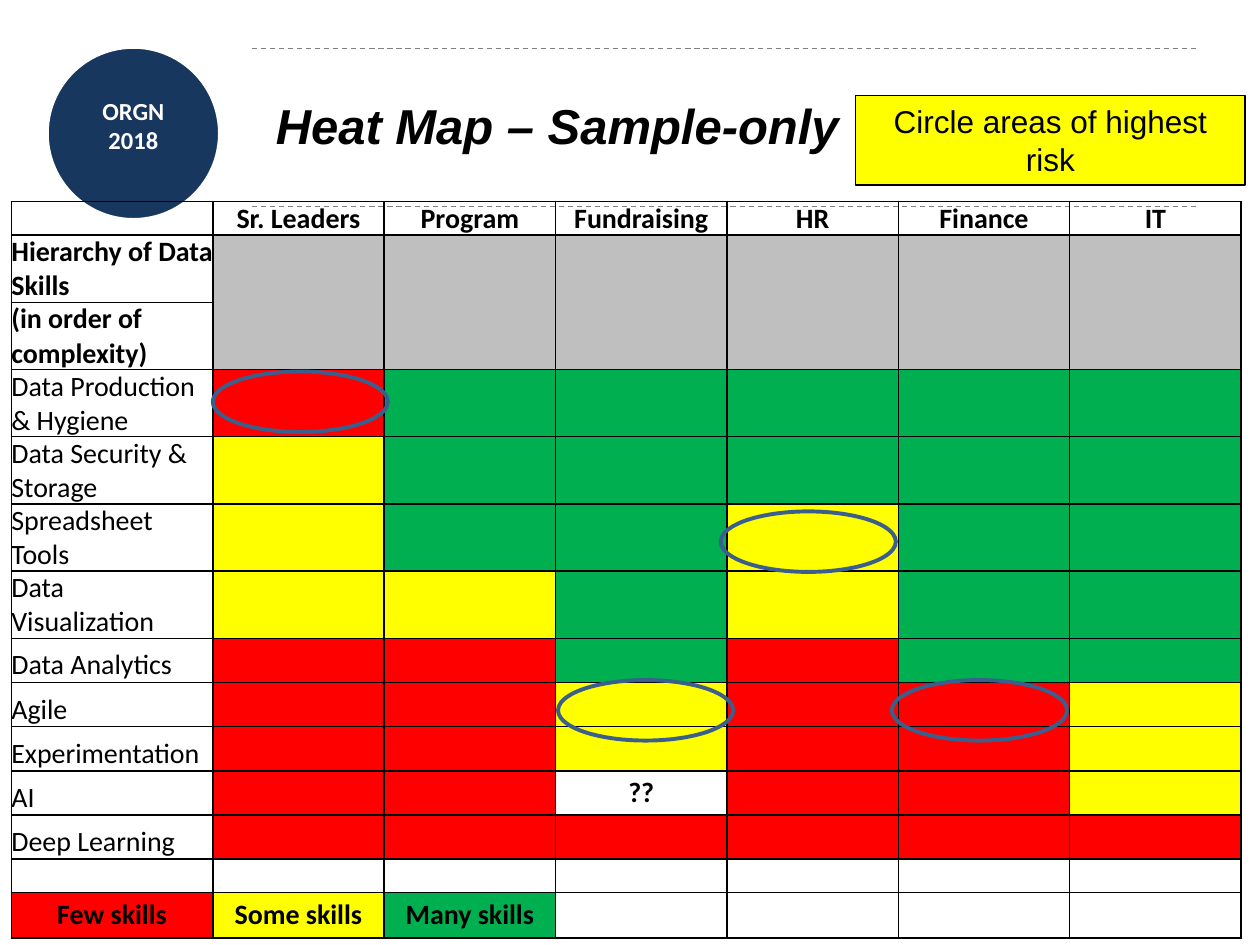
from dataclasses import dataclass
from typing import Any, Optional

import pptx
import pptx.dml.color
import pptx.enum.dml
import pptx.enum.shapes
import pptx.enum.text
import pptx.oxml
import pptx.oxml.ns
import pptx.util
from pptx.util import Cm, Pt

RGB = pptx.dml.color.RGBColor
ALIGN = pptx.enum.text.PP_ALIGN
ANCHOR = pptx.enum.text.MSO_ANCHOR
SHAPE = pptx.enum.shapes.MSO_SHAPE


@dataclass(frozen=True)
class Theme:
    navy: str = "17375E"
    ring: str = "3A5F8C"
    rule: str = "808080"
    grey: str = "BFBFBF"
    few: str = "FF0000"
    some: str = "FFFF00"
    many: str = "00B050"
    black: str = "000000"
    white: str = "FFFFFF"
    heading_font: str = "Arial"
    body_font: str = "Calibri"
    title_size: int = 28
    note_size: int = 18
    table_size: int = 16
    badge_size: int = 14


@dataclass(frozen=True)
class Box:
    """Left, top, width and height in centimetres."""
    left: float
    top: float
    width: float
    height: float

    def lengths(self) -> list[pptx.util.Length]:
        return [Cm(value) for value in (self.left, self.top, self.width, self.height)]


@dataclass(frozen=True)
class Skill:
    """A skill and its level per department: F few, S some, M many, ? unknown."""
    name: str
    levels: str


THEME = Theme()
LEVEL_COLORS = {"F": THEME.few, "S": THEME.some, "M": THEME.many, "?": THEME.white}
DEPARTMENTS = ["Sr. Leaders", "Program", "Fundraising", "HR", "Finance", "IT"]
HIERARCHY_LABELS = ["Hierarchy of Data Skills", "(in order of complexity)"]
SKILLS = [
    Skill("Data Production & Hygiene", "FMMMMM"),
    Skill("Data Security & Storage", "SMMMMM"),
    Skill("Spreadsheet Tools", "SMMSMM"),
    Skill("Data Visualization", "SSMSMM"),
    Skill("Data Analytics", "FFMFMM"),
    Skill("Agile", "FFSFFS"),
    Skill("Experimentation", "FFSFFS"),
    Skill("AI", "FF?FFS"),
    Skill("Deep Learning", "FFFFFF"),
]
LEGEND = [("Few skills", "F"), ("Some skills", "S"), ("Many skills", "M")]
TABLE_BOX = Box(0.23, 4.06, 24.79, 11.96)
LABEL_WIDTH, DEPARTMENT_WIDTH = 4.06, 3.455
ROW_HEIGHTS = [0.64] + [0.89] * (len(HIERARCHY_LABELS) + len(SKILLS)) + [0.64, 0.91]
RISK_RINGS = [(11.25, 13.71), (4.29, 7.49), (14.53, 10.31), (17.98, 13.71)]
RING_WIDTH, RING_HEIGHT = 3.53, 1.22


def apply_format(target: Any, values: dict[str, Any]) -> None:
    for name, value in values.items():
        setattr(target, name, value)


def write_lines(frame: Any, lines: list[str], align: Any, color: str, **font: Any) -> None:
    frame.text = "\n".join(lines)
    for paragraph in frame.paragraphs:
        paragraph.alignment = align
        for run in paragraph.runs:
            apply_format(run.font, font)
            run.font.color.rgb = RGB.from_string(color)


def add_outlined(slide: Any, kind: Any, box: Box, line: str, width: float,
                 fill: Optional[str] = None) -> Any:
    shape = slide.shapes.add_shape(kind, *box.lengths())
    shape.shadow.inherit = False
    shape.line.color.rgb = RGB.from_string(line)
    shape.line.width = Pt(width)
    if fill:
        shape.fill.solid()
        shape.fill.fore_color.rgb = RGB.from_string(fill)
    else:
        shape.fill.background()
    return shape


def add_rule(slide: Any, top: float) -> None:
    rule = slide.shapes.add_connector(
        pptx.enum.shapes.MSO_CONNECTOR.STRAIGHT, Cm(5.08), Cm(top), Cm(24.13), Cm(top))
    rule.line.color.rgb = RGB.from_string(THEME.rule)
    apply_format(rule.line, {"width": Pt(0.75),
                             "dash_style": pptx.enum.dml.MSO_LINE.DASH})
    rule._element.spPr.append(pptx.oxml.parse_xml(
        f'<a:effectLst {pptx.oxml.ns.nsdecls("a")}/>'))


def add_badge(slide: Any) -> None:
    add_outlined(slide, SHAPE.OVAL, Box(0.94, 0.94, 3.5, 3.5), THEME.white, 2.5, THEME.navy)
    label = slide.shapes.add_textbox(*Box(1.09, 1.93, 3.2, 1.19).lengths())
    apply_format(label.text_frame, {"word_wrap": True, "margin_left": 0, "margin_right": 0,
                                    "margin_top": 0, "margin_bottom": 0})
    write_lines(label.text_frame, ["ORGN", "2018"], ALIGN.CENTER, THEME.white,
                name=THEME.body_font, size=Pt(THEME.badge_size), bold=True)


def add_title(slide: Any) -> None:
    title = slide.shapes.add_textbox(*Box(5.31, 1.42, 19.28, 2.18).lengths())
    apply_format(title.text_frame, {"word_wrap": True, "vertical_anchor": ANCHOR.MIDDLE})
    write_lines(title.text_frame, ["Heat Map – Sample-only"], ALIGN.LEFT, THEME.black,
                name=THEME.heading_font, size=Pt(THEME.title_size), bold=True, italic=True)


def add_note(slide: Any) -> None:
    note = add_outlined(slide, SHAPE.RECTANGLE, Box(17.25, 1.93, 7.85, 1.8),
                        THEME.black, 0.75, THEME.some)
    apply_format(note.text_frame, {"word_wrap": True, "vertical_anchor": ANCHOR.TOP})
    write_lines(note.text_frame, ["Circle areas of highest risk"], ALIGN.CENTER,
                THEME.black, name=THEME.heading_font, size=Pt(THEME.note_size))


def prepare_cell(cell: Any) -> None:
    """Clear the default fill and margins, size the empty line and draw black borders."""
    apply_format(cell, {"margin_left": 0, "margin_right": 0,
                        "margin_top": 0, "margin_bottom": 0})
    cell.fill.background()
    end_format = cell.text_frame.paragraphs[0]._p.get_or_add_endParaRPr()
    end_format.set("sz", str(THEME.table_size * 100))
    properties = cell._tc.get_or_add_tcPr()
    for index, side in enumerate(("lnL", "lnR", "lnT", "lnB")):
        properties.insert(index, pptx.oxml.parse_xml(
            f'<a:{side} {pptx.oxml.ns.nsdecls("a")} w="{Pt(1)}"><a:solidFill>'
            f'<a:srgbClr val="{THEME.black}"/></a:solidFill></a:{side}>'))


def paint_cell(cell: Any, color: str) -> None:
    cell.fill.solid()
    cell.fill.fore_color.rgb = RGB.from_string(color)


def label_cell(cell: Any, text: str, align: Any = ALIGN.CENTER,
               anchor: Any = ANCHOR.MIDDLE, bold: bool = True) -> None:
    cell.vertical_anchor = anchor
    write_lines(cell.text_frame, [text], align, THEME.black,
                name=THEME.body_font, size=Pt(THEME.table_size), bold=bold)


def add_heat_map(slide: Any) -> None:
    row_count, column_count = len(ROW_HEIGHTS), len(DEPARTMENTS) + 1
    table = slide.shapes.add_table(row_count, column_count, *TABLE_BOX.lengths()).table
    for index, column in enumerate(table.columns):
        column.width = Cm(DEPARTMENT_WIDTH if index else LABEL_WIDTH)
    for row, height in zip(table.rows, ROW_HEIGHTS):
        row.height = Cm(height)
        for cell in row.cells:
            prepare_cell(cell)

    for column, department in enumerate(DEPARTMENTS, 1):
        label_cell(table.cell(0, column), department, anchor=ANCHOR.BOTTOM)
        paint_cell(table.cell(1, column), THEME.grey)
        table.cell(1, column).merge(table.cell(2, column))
    for row, text in enumerate(HIERARCHY_LABELS, 1):
        label_cell(table.cell(row, 0), text, ALIGN.LEFT, ANCHOR.BOTTOM)
    for row, skill in enumerate(SKILLS, 1 + len(HIERARCHY_LABELS)):
        label_cell(table.cell(row, 0), skill.name, ALIGN.LEFT, ANCHOR.BOTTOM, bold=False)
        for column, level in enumerate(skill.levels, 1):
            paint_cell(table.cell(row, column), LEVEL_COLORS[level])
            if level == "?":
                label_cell(table.cell(row, column), "??")
    for column, (text, level) in enumerate(LEGEND):
        label_cell(table.cell(row_count - 1, column), text)
        paint_cell(table.cell(row_count - 1, column), LEVEL_COLORS[level])


def main() -> None:
    presentation = pptx.Presentation()
    apply_format(presentation, {"slide_width": Cm(25.4), "slide_height": Cm(19.05)})
    slide = presentation.slides.add_slide(presentation.slide_layouts[6])
    add_badge(slide)
    for top in (0.98, 4.16):
        add_rule(slide, top)
    add_title(slide)
    add_heat_map(slide)
    for left, top in RISK_RINGS:
        add_outlined(slide, SHAPE.OVAL, Box(left, top, RING_WIDTH, RING_HEIGHT),
                     THEME.ring, 2.25)
    add_note(slide)
    presentation.save("out.pptx")


if __name__ == "__main__":
    main()
